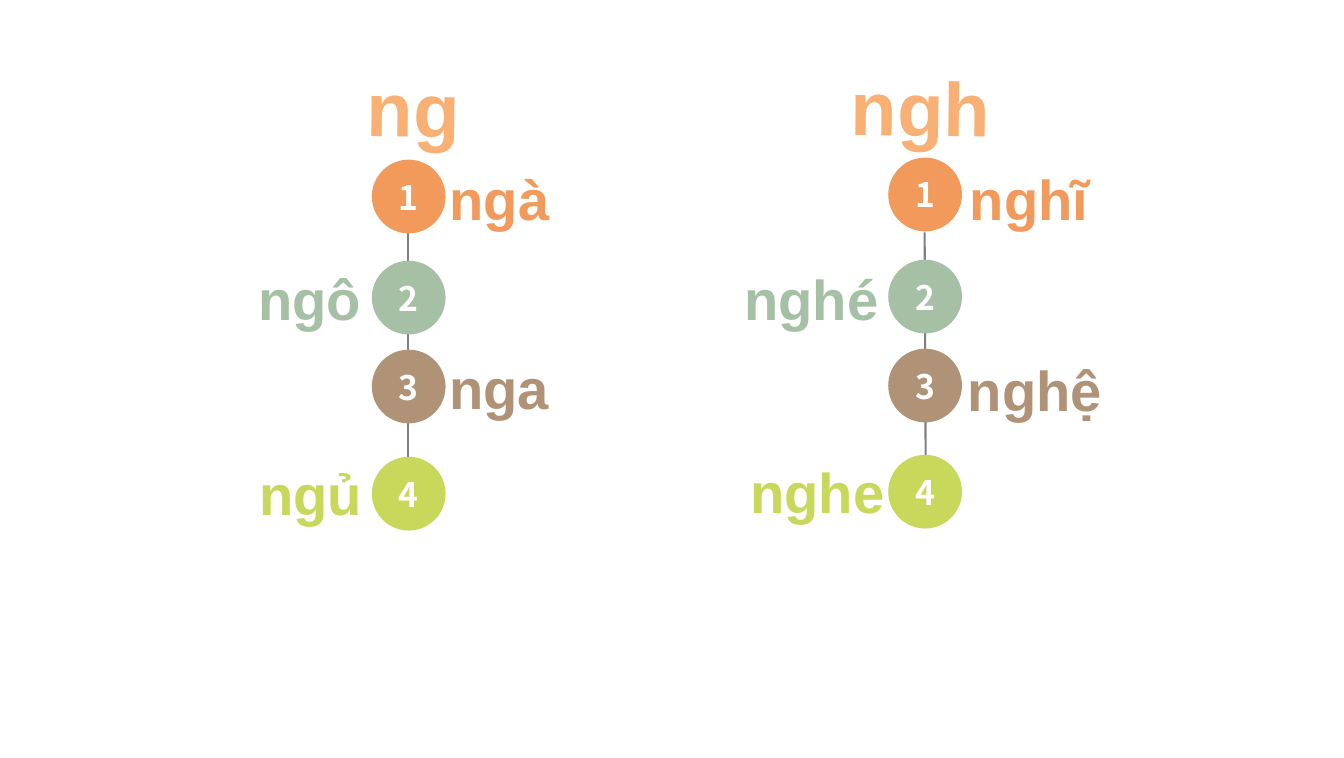
import pptx
import pptx.util
import pptx.dml.color
import pptx.enum.shapes
import pptx.enum.text
import pptx.oxml.ns
from lxml import etree

Inches = pptx.util.Inches
Pt = pptx.util.Pt
ALIGN = pptx.enum.text.PP_ALIGN
ANCHOR = pptx.enum.text.MSO_ANCHOR
AUTO_SIZE = pptx.enum.text.MSO_AUTO_SIZE

COLORS = {
    "heading": "F9B074", "line": "808080", "number": "FFFFFF",
    "orange": "F29A5B", "green": "A5C0A4", "brown": "B09277", "lime": "C8D85B",
}
STEP_COLORS = ["orange", "green", "brown", "lime"]

# Each heading: left, top, width; each word: text, left, top, width of its label
SPELLINGS = [
    {
        "heading": "ng", "heading_at": (3.52, 0.56, 1.15), "heading_align": ALIGN.CENTER,
        "circle_left": 3.68, "circle_tops": [1.58, 2.58, 3.46, 4.52],
        "line": (4.04, 2.31, 4.04, 4.82),
        "words": [("ngà", 4.35, 1.58, 3.22), ("ngô", -0.27, 2.57, 3.94),
                  ("nga", 4.35, 3.45, 2.86), ("ngủ", 0.82, 4.5, 2.86)],
    },
    {
        "heading": "ngh", "heading_at": (8.2, 0.55, 1.7), "heading_align": ALIGN.RIGHT,
        "circle_left": 8.79, "circle_tops": [1.56, 2.57, 3.45, 4.5],
        "line": (9.15, 2.3, 9.16, 4.5),
        "words": [("nghĩ", 9.5, 1.58, 2.4), ("nghé", 6.98, 2.57, 1.81),
                  ("nghệ", 9.48, 3.47, 2.76), ("nghe", 6.65, 4.48, 2.2)],
    },
]
CIRCLE_SIZE = 0.73
WORD_HEIGHT = 0.77
HEADING_HEIGHT = 0.23
HEADING_TILT = 0.6


def rgb(name):
    return pptx.dml.color.RGBColor.from_string(COLORS[name])


def write(frame, text, size, font, color, align):
    paragraph = frame.paragraphs[0]
    paragraph.alignment = align
    run = paragraph.add_run()
    run.text = text
    run.font.size = Pt(size)
    run.font.name = font
    run.font.bold = True
    run.font.color.rgb = rgb(color)


def add_line(slide, ends):
    line = slide.shapes.add_connector(
        pptx.enum.shapes.MSO_CONNECTOR.STRAIGHT, *map(Inches, ends))
    line.line.color.rgb = rgb("line")
    line.line.width = Pt(1.5)
    etree.SubElement(line._element.spPr, pptx.oxml.ns.qn("a:effectLst"))


def add_circle(slide, number, left, top, color):
    circle = slide.shapes.add_shape(
        pptx.enum.shapes.MSO_SHAPE.OVAL,
        *map(Inches, (left, top, CIRCLE_SIZE, CIRCLE_SIZE)))
    circle.shadow.inherit = False
    circle.fill.solid()
    circle.fill.fore_color.rgb = rgb(color)
    circle.line.fill.background()
    circle.text_frame.vertical_anchor = ANCHOR.MIDDLE
    write(circle.text_frame, str(number), 24, "Noto Sans CJK SC", "number", ALIGN.CENTER)


def add_word(slide, word, left, top, width, color, align):
    label = slide.shapes.add_textbox(*map(Inches, (left, top, width, WORD_HEIGHT)))
    label.text_frame.word_wrap = True
    label.text_frame.auto_size = AUTO_SIZE.SHAPE_TO_FIT_TEXT
    write(label.text_frame, word, 40, "Arial", color, align)


def add_heading(slide, text, place, align):
    heading = slide.shapes.add_textbox(*map(Inches, (*place, HEADING_HEIGHT)))
    heading.rotation = HEADING_TILT
    heading.text_frame.word_wrap = False
    write(heading.text_frame, text, 54, "Arial", "heading", align)


def add_spelling(slide, spelling):
    add_line(slide, spelling["line"])
    steps = zip(spelling["circle_tops"], spelling["words"], STEP_COLORS)
    for number, (top, word, color) in enumerate(steps, start=1):
        add_circle(slide, number, spelling["circle_left"], top, color)
        # Odd steps have their word on the right, even ones on the left
        align = ALIGN.LEFT if number % 2 else ALIGN.RIGHT
        add_word(slide, *word, color, align)
    add_heading(slide, spelling["heading"], spelling["heading_at"],
                spelling["heading_align"])


def main():
    deck = pptx.Presentation()
    deck.slide_width = Inches(13.3)
    deck.slide_height = Inches(7.5)
    slide = deck.slides.add_slide(deck.slide_layouts[6])
    for spelling in SPELLINGS:
        add_spelling(slide, spelling)
    deck.save("out.pptx")


if __name__ == "__main__":
    main()
